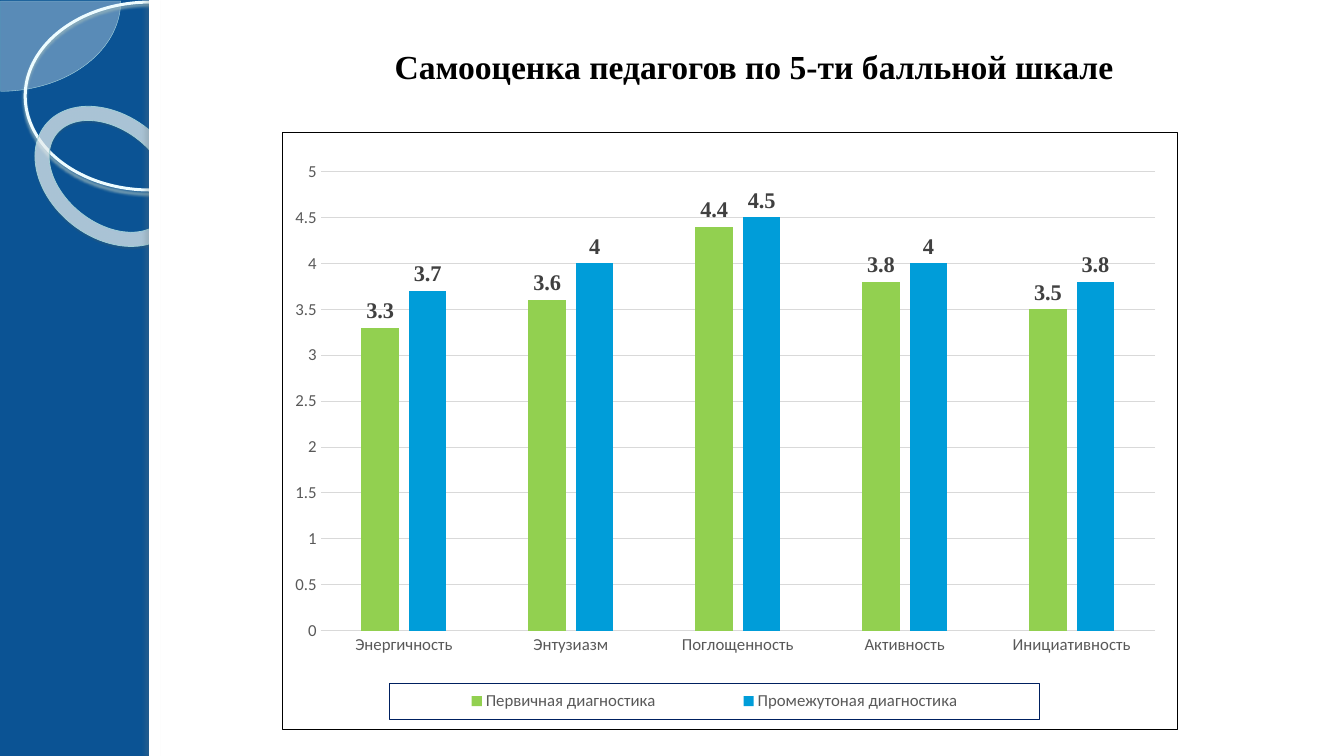
from lxml.etree import SubElement
from pptx import Presentation
from pptx.chart.data import CategoryChartData
from pptx.dml.color import RGBColor
from pptx.enum.chart import XL_CHART_TYPE, XL_LABEL_POSITION, XL_LEGEND_POSITION, XL_TICK_MARK
from pptx.enum.shapes import MSO_SHAPE
from pptx.enum.text import MSO_ANCHOR, PP_ALIGN
from pptx.oxml import parse_xml
from pptx.oxml.ns import nsdecls, qn
from pptx.util import Pt

PX = 9525  # EMU in one pixel, 96 pixels to the inch
BLUE = RGBColor(0x0B, 0x53, 0x94)
WHITE = RGBColor(0xFF, 0xFF, 0xFF)
BLACK = RGBColor(0x00, 0x00, 0x00)
ICE = RGBColor(0xF8, 0xFE, 0xFF)
PIE_LINE = RGBColor(0xAF, 0xDB, 0xE2)
RING_LINE = RGBColor(0xED, 0xFC, 0xFF)
DONUT_LINE = RGBColor(0xA1, 0xCF, 0xD6)
RING_SHADOW = RGBColor(0x9C, 0xB9, 0xBE)
DONUT_SHADOW = RGBColor(0x4B, 0x5E, 0x61)
EDGE_SHADOW = RGBColor(0x6C, 0x7A, 0x7C)
GRAY = RGBColor(0x59, 0x59, 0x59)
GRID = RGBColor(0xD9, 0xD9, 0xD9)
LABEL = RGBColor(0x40, 0x40, 0x40)
GREEN = RGBColor(0x92, 0xD0, 0x50)
SKY = RGBColor(0x00, 0x9D, 0xD9)
NAVY = "002060"


def set_layout(element, index, x, y, width, height, inner=False):
    """Give a plot area or legend a fixed place, in fractions of the chart."""
    for old in element.findall(qn("c:layout")):
        element.remove(old)
    target = '<c:layoutTarget val="inner"/>' if inner else ""
    element.insert(index, parse_xml(
        f'<c:layout {nsdecls("c")}><c:manualLayout>{target}'
        '<c:xMode val="edge"/><c:yMode val="edge"/>'
        f'<c:x val="{x}"/><c:y val="{y}"/><c:w val="{width}"/><c:h val="{height}"/>'
        '</c:manualLayout></c:layout>'))


def border(color):
    """Return chart shape properties with a thin outline and no fill."""
    return parse_xml(
        f'<c:spPr {nsdecls("c", "a")}><a:noFill/><a:ln w="9525"><a:solidFill>'
        f'<a:srgbClr val="{color}"/></a:solidFill></a:ln></c:spPr>')


presentation = Presentation()
presentation.slide_width = 1280 * PX
presentation.slide_height = 720 * PX
slide = presentation.slides.add_slide(presentation.slide_layouts[5])
slide.background.fill.solid()
slide.background.fill.fore_color.rgb = BLUE

# Side decoration and white panel: kind, box, adjustments, rotation,
# fill, opacity %, line, line width, shadow (colour, opacity %, blur, distance, angle)
decorations = [
    (MSO_SHAPE.PIE, (-114, -85, 229, 172), (0, 54), 0, ICE, 33, PIE_LINE, 0.25, None),
    (MSO_SHAPE.OVAL, (24, 2, 238, 179), (), 0, None, 0, RING_LINE, 2.15,
     (RING_SHADOW, 85, 2, 2, 90)),
    (MSO_SHAPE.DONUT, (26, 110, 157, 116), (0.118,), 38.6, ICE, 65, DONUT_LINE, 0.58,
     (DONUT_SHADOW, 35, 1, 1.2, 75)),
    (MSO_SHAPE.RECTANGLE, (142, 0, 1138, 720), (), 0, WHITE, 100, None, 0, None),
    (MSO_SHAPE.RECTANGLE, (142, 0, 11, 720), (), 0, WHITE, 100, None, 0,
     (EDGE_SHADOW, 25, 3, 3, 180)),
]
for kind, box, adjustments, rotation, fill, opacity, line, width, shadow in decorations:
    shape = slide.shapes.add_shape(kind, *(value * PX for value in box))
    shape.shadow.inherit = False
    shape.rotation = rotation
    for index, value in enumerate(adjustments):
        shape.adjustments[index] = value
    if fill is None:
        shape.fill.background()
    else:
        shape.fill.solid()
        shape.fill.fore_color.rgb = fill
        color = shape._element.spPr.find(qn("a:solidFill"))[0]
        SubElement(color, qn("a:alpha"), val=str(opacity * 1000))
    if line is None:
        shape.line.fill.background()
    else:
        shape.line.color.rgb = line
        shape.line.width = Pt(width)
    if shadow:
        shadow_color, strength, blur, distance, angle = shadow
        effects = shape._element.spPr.find(qn("a:effectLst"))
        outer = SubElement(effects, qn("a:outerShdw"), blurRad=str(Pt(blur)),
                           dist=str(Pt(distance)), dir=str(angle * 60000),
                           algn="tl", rotWithShape="0")
        color = SubElement(outer, qn("a:srgbClr"), val=str(shadow_color))
        SubElement(color, qn("a:alpha"), val=str(strength * 1000))

# Title, raised above the white panel
title = slide.shapes.title
title.left, title.top, title.width, title.height = (
    value * PX for value in (269, 24, 898, 77))
slide.shapes._spTree.append(title._element)
title.text_frame.text = "Самооценка педагогов по 5-ти балльной шкале"
title.text_frame.vertical_anchor = MSO_ANCHOR.MIDDLE
paragraph = title.text_frame.paragraphs[0]
paragraph.alignment = PP_ALIGN.CENTER
title_font = paragraph.runs[0].font
title_font.name = "Times New Roman"
title_font.size = Pt(24)
title_font.bold = True
title_font.color.rgb = BLACK

# Chart
chart_data = CategoryChartData()
chart_data.categories = ["Энергичность", "Энтузиазм", "Поглощенность",
                         "Активность", "Инициативность"]
chart_data.add_series("Первичная диагностика", (3.3, 3.6, 4.4, 3.8, 3.5))
chart_data.add_series("Промежутоная диагностика", (3.7, 4, 4.5, 4, 3.8))
chart = slide.shapes.add_chart(
    XL_CHART_TYPE.COLUMN_CLUSTERED,
    *(value * PX for value in (269, 126, 853, 569)), chart_data).chart
chart.has_title = False
chart.font.name = "Calibri"
chart.font.size = Pt(10)
chart.font.color.rgb = BLACK
chart_element = chart._chartSpace.chart
chart_element.addnext(border(str(BLACK)))
set_layout(chart_element.plotArea, 0, 0.042, 0.065, 0.933, 0.77, inner=True)

# Columns and their labels
plot = chart.plots[0]
plot.gap_width = 219
plot.overlap = -27
plot.vary_by_categories = False
for series, color in zip(plot.series, (GREEN, SKY)):
    series.format.fill.solid()
    series.format.fill.fore_color.rgb = color
    labels = series.data_labels
    labels.show_value = True
    labels.position = XL_LABEL_POSITION.OUTSIDE_END
    labels.font.name = "Times New Roman"
    labels.font.size = Pt(16)
    labels.font.bold = True
    labels.font.color.rgb = LABEL

# Axes
category_axis, value_axis = chart.category_axis, chart.value_axis
for axis in (category_axis, value_axis):
    axis.major_tick_mark = XL_TICK_MARK.NONE
    axis.minor_tick_mark = XL_TICK_MARK.NONE
category_axis.format.line.color.rgb = GRID
category_axis.format.line.width = Pt(0.75)
value_axis.minimum_scale = 0
value_axis.maximum_scale = 5
value_axis.major_unit = 0.5
value_axis.format.line.fill.background()
value_axis.major_gridlines.format.line.color.rgb = GRID
value_axis.major_gridlines.format.line.width = Pt(0.75)

# Legend
chart.has_legend = True
legend = chart.legend
legend.position = XL_LEGEND_POSITION.BOTTOM
legend.include_in_layout = False
for font in (category_axis.tick_labels.font, value_axis.tick_labels.font, legend.font):
    font.name = "Calibri"
    font.size = Pt(12)
    font.color.rgb = GRAY
set_layout(legend._element, 1, 0.119, 0.923, 0.727, 0.06)
legend._element.find(qn("c:txPr")).addprevious(border(NAVY))

presentation.save("out.pptx")
